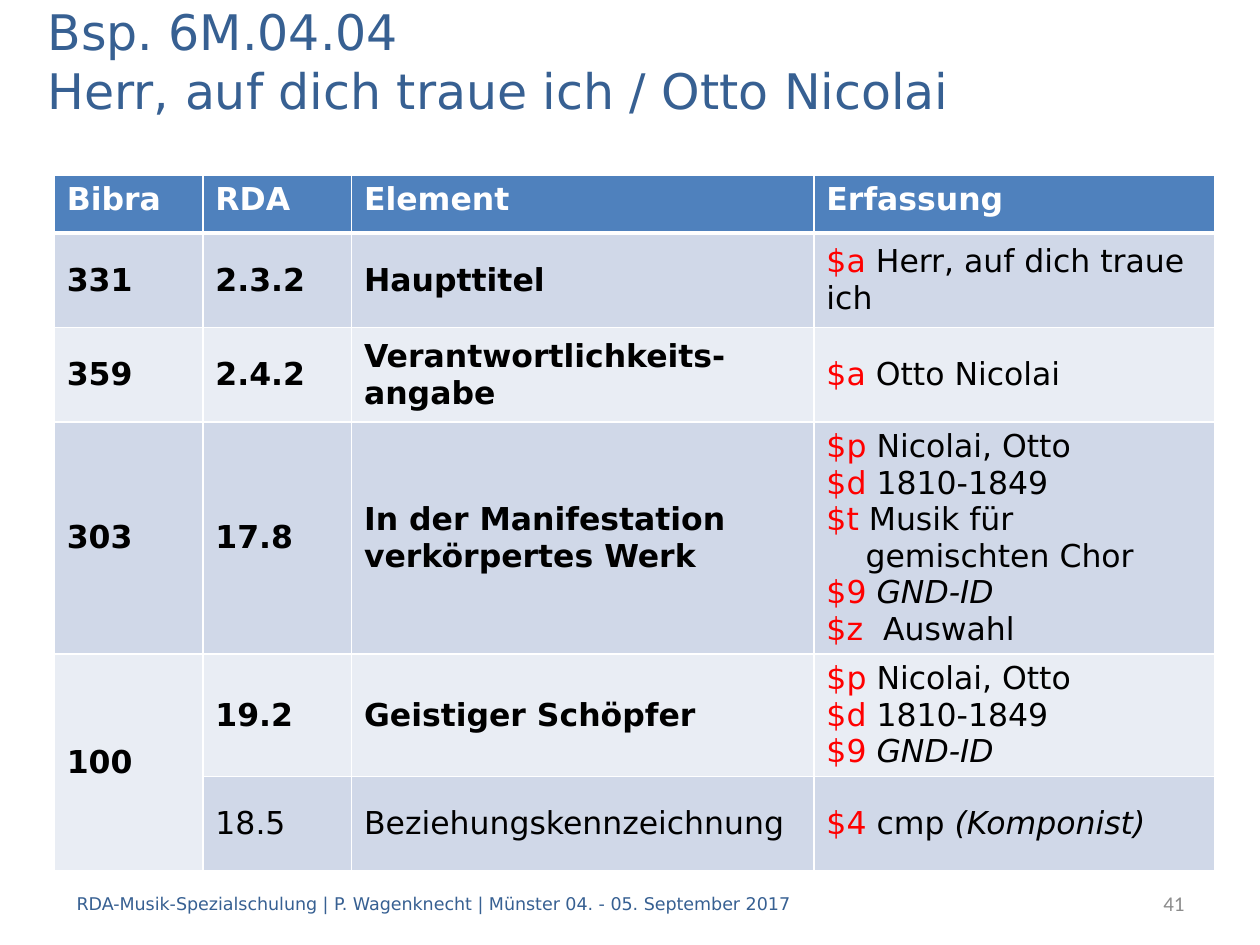
from pptx import Presentation
from pptx.dml.color import RGBColor
from pptx.enum.text import MSO_ANCHOR, PP_ALIGN
from pptx.oxml import parse_xml
from pptx.oxml.ns import nsdecls
from pptx.util import Inches, Pt

FONT = "DejaVu Sans"
BLUE, BLACK, RED, WHITE = "376092", "000000", "FF0000", "FFFFFF"
HEADER_FILL, BAND_FILLS = "4F81BD", ("D0D8E8", "E9EDF4")
COLUMN_WIDTHS = (1.18, 1.18, 3.67, 3.18)
HEADER_HEIGHT, ROW_HEIGHT = 0.46, 0.75
HANGING_INDENT = 0.31

HEADERS = ("Bibra", "RDA", "Element", "Erfassung")
PERSON = [("$p", " Nicolai, Otto"), ("$d", " 1810-1849")]
AUTHORITY = ("$9 ", "", "GND-ID")
# Each entry line holds: subfield code, plain text, italic text.
ROWS = [
    ("331", "2.3.2", "Haupttitel", [("$a", " Herr, auf dich traue ich")]),
    ("359", "2.4.2", "Verantwortlichkeits-angabe", [("$a", " Otto Nicolai")]),
    ("303", "17.8", "In der Manifestation verkörpertes Werk",
     PERSON + [("$t ", "Musik für\ngemischten Chor"), AUTHORITY, ("$z ", " Auswahl")]),
    ("100", "19.2", "Geistiger Schöpfer", PERSON + [AUTHORITY]),
    ("", "18.5", "Beziehungskennzeichnung", [("$4 ", "cmp ", "(Komponist)")]),
]


def color(value):
    return RGBColor.from_string(value)


def add_run(paragraph, text, size, text_color, font=FONT, bold=False, italic=False):
    """Add text to the paragraph, with a line break at each newline."""
    for index, line in enumerate(text.split("\n")):
        if index:
            paragraph.add_line_break()
        run = paragraph.add_run()
        run.text = line
        run.font.name, run.font.size = font, Pt(size)
        run.font.bold, run.font.italic = bold, italic
        run.font.color.rgb = color(text_color)


def add_text(slide, box, text, size, text_color, font=FONT, align=PP_ALIGN.LEFT):
    frame = slide.shapes.add_textbox(*map(Inches, box)).text_frame
    frame.word_wrap = True
    frame.vertical_anchor = MSO_ANCHOR.MIDDLE
    frame.paragraphs[0].alignment = align
    add_run(frame.paragraphs[0], text, size, text_color, font)


def style_cell(cell, fill, top=1, bottom=1):
    cell.fill.solid()
    cell.fill.fore_color.rgb = color(fill)
    properties = cell._tc.get_or_add_tcPr()
    widths = {"lnL": 1, "lnR": 1, "lnT": top, "lnB": bottom}
    for index, (side, width) in enumerate(widths.items()):
        properties.insert(index, parse_xml(
            f'<a:{side} {nsdecls("a")} w="{Pt(width)}"><a:solidFill>'
            f'<a:srgbClr val="{WHITE}"/></a:solidFill></a:{side}>'))


def space_paragraph(paragraph):
    paragraph.space_before = paragraph.space_after = Pt(6)


def fill_entry(cell, lines):
    frame = cell.text_frame
    for index, (code, plain, *italic) in enumerate(lines):
        paragraph = frame.add_paragraph() if index else frame.paragraphs[0]
        if len(lines) == 1:
            space_paragraph(paragraph)
        if "\n" in plain:
            properties = paragraph._p.get_or_add_pPr()
            properties.set("marL", str(Inches(HANGING_INDENT)))
            properties.set("indent", str(-Inches(HANGING_INDENT)))
        add_run(paragraph, code, 18, RED)
        if plain:
            add_run(paragraph, plain, 18, BLACK)
        for text in italic:
            add_run(paragraph, text, 18, BLACK, italic=True)


def add_field_table(slide, left, top):
    height = HEADER_HEIGHT + ROW_HEIGHT * len(ROWS)
    table = slide.shapes.add_table(
        len(ROWS) + 1, len(HEADERS), Inches(left), Inches(top),
        Inches(sum(COLUMN_WIDTHS)), Inches(height)).table
    table.horz_banding = False
    for column, width in zip(table.columns, COLUMN_WIDTHS):
        column.width = Inches(width)
    for index, row in enumerate(table.rows):
        row.height = Inches(ROW_HEIGHT if index else HEADER_HEIGHT)

    for column, header in enumerate(HEADERS):
        cell = table.cell(0, column)
        style_cell(cell, HEADER_FILL, bottom=3)
        add_run(cell.text_frame.paragraphs[0], header, 18, WHITE, bold=True)

    for row, (*labels, entry) in enumerate(ROWS, start=1):
        for column in range(len(HEADERS)):
            cell = table.cell(row, column)
            style_cell(cell, BAND_FILLS[(row - 1) % 2], top=3 if row == 1 else 1)
            cell.vertical_anchor = MSO_ANCHOR.MIDDLE
        for column, label in enumerate(labels):
            if label:
                paragraph = table.cell(row, column).text_frame.paragraphs[0]
                space_paragraph(paragraph)
                add_run(paragraph, label, 18, BLACK, bold=row < len(ROWS))
        fill_entry(table.cell(row, len(labels)), entry)
    table.cell(len(ROWS) - 1, 0).merge(table.cell(len(ROWS), 0))


def add_footer(slide, top, height):
    add_text(slide, (0.51, top, 8.74, height),
             "RDA-Musik-Spezialschulung | P. Wagenknecht | Münster 04. - 05. September 2017",
             10, BLUE)
    add_text(slide, (7.91, top, 1.59, height), "41", 12, "8C8C8C", "Calibri", PP_ALIGN.RIGHT)


def main():
    presentation = Presentation()
    presentation.slide_width, presentation.slide_height = Inches(10), Inches(7.5)
    slide = presentation.slides.add_slide(presentation.slide_layouts[6])
    add_field_table(slide, 0.43, 1.39)
    add_text(slide, (0.28, 0.2, 9.45, 0.56),
             "Bsp. 6M.04.04\nHerr, auf dich traue ich / Otto Nicolai", 28, BLUE)
    add_footer(slide, 6.97, 0.4)
    presentation.save("out.pptx")


if __name__ == "__main__":
    main()
